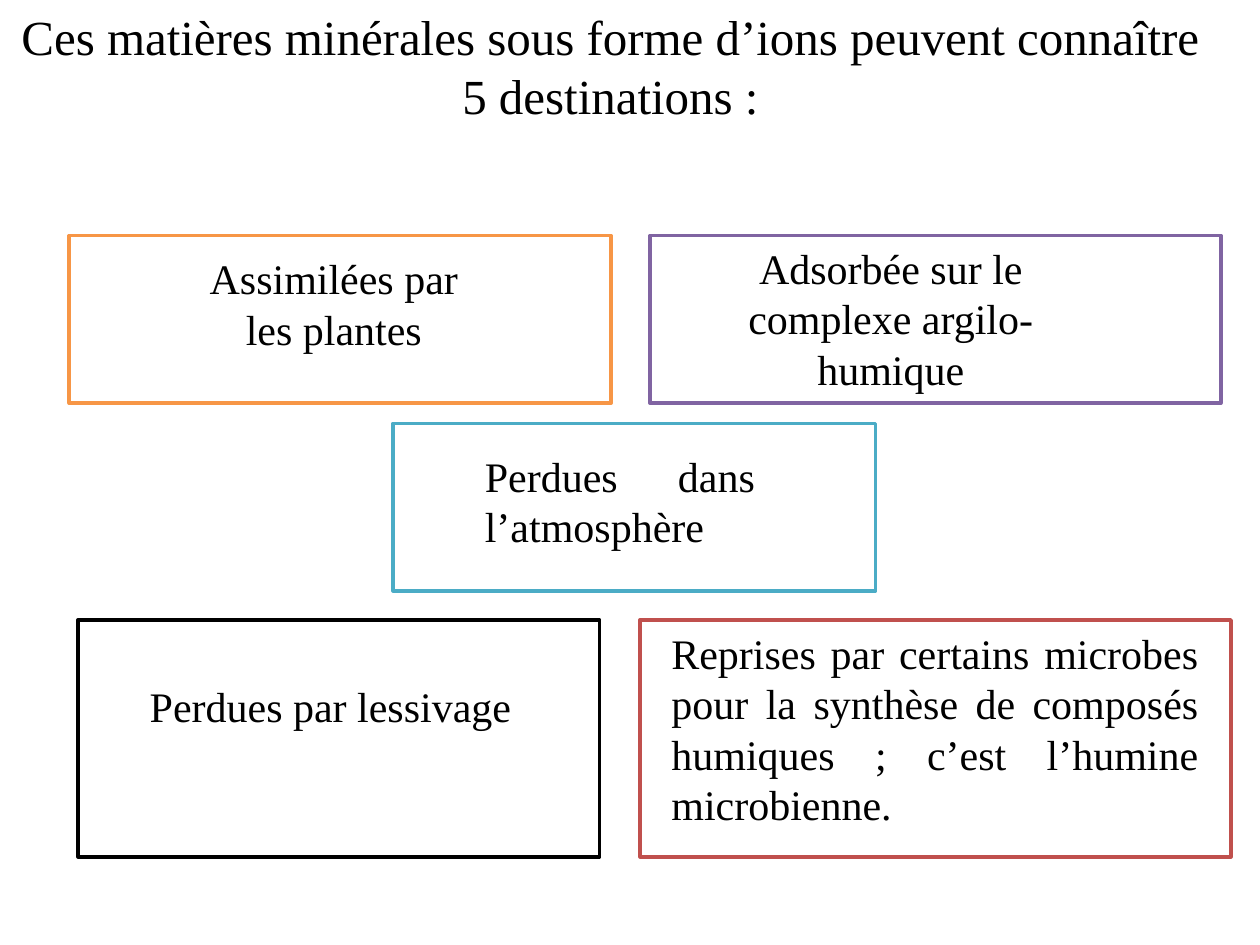
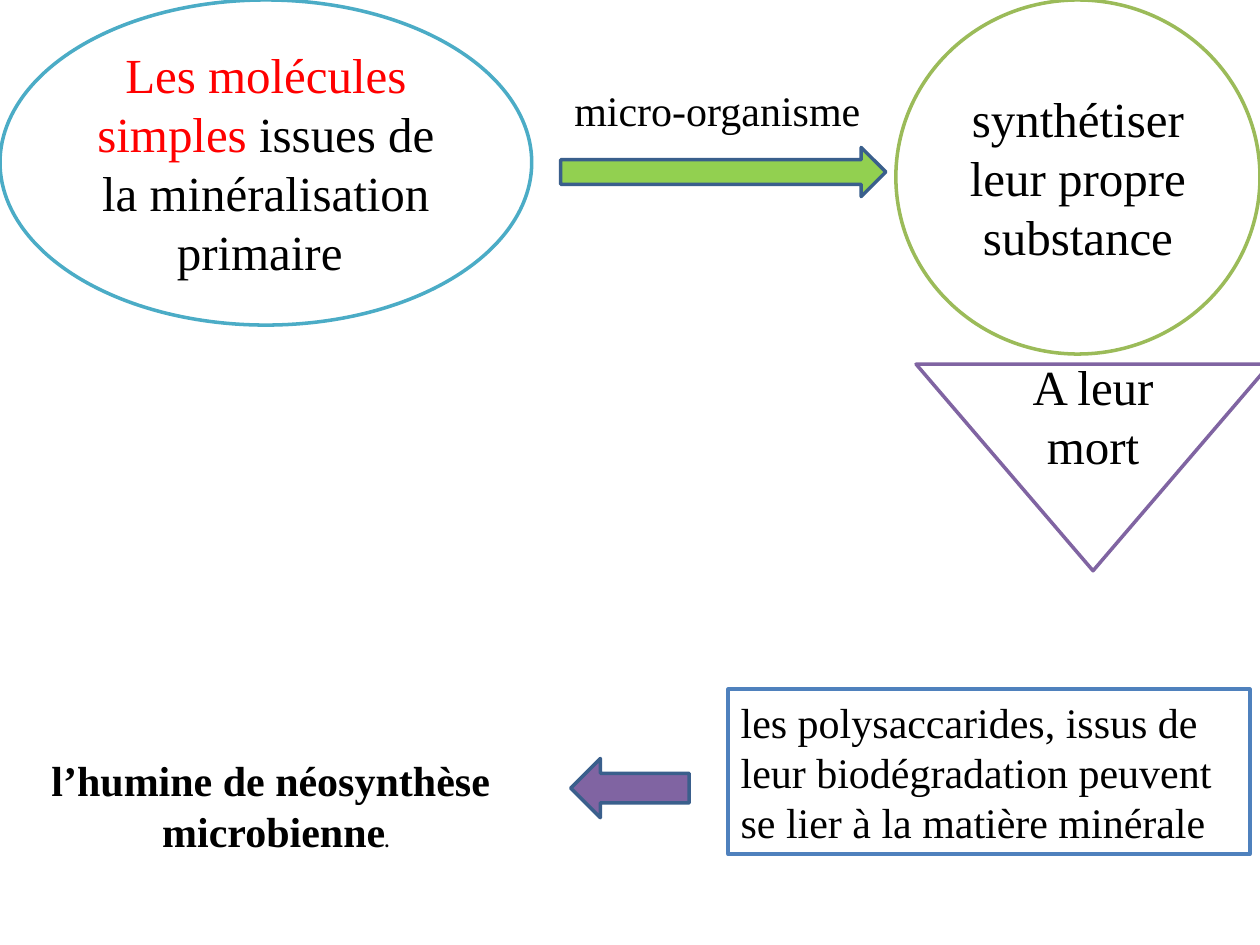
from pptx import Presentation
from pptx.dml.color import RGBColor
from pptx.enum.shapes import MSO_SHAPE
from pptx.enum.text import MSO_ANCHOR, MSO_AUTO_SIZE, PP_ALIGN
from pptx.util import Pt

PX = 9144
BLACK = RGBColor(0x00, 0x00, 0x00)
WHITE = RGBColor(0xFF, 0xFF, 0xFF)
RED = RGBColor(0xFF, 0x00, 0x00)
ORANGE = RGBColor(0xF7, 0x96, 0x46)
PURPLE = RGBColor(0x80, 0x64, 0xA2)
TEAL = RGBColor(0x4B, 0xAC, 0xC6)
BRICK = RGBColor(0xC0, 0x50, 0x4D)
BLUE = RGBColor(0x4F, 0x81, 0xBD)
OLIVE = RGBColor(0x9B, 0xBB, 0x59)
LIME = RGBColor(0x92, 0xD0, 0x50)
NAVY = RGBColor(0x3A, 0x5F, 0x8C)

RECT = MSO_SHAPE.RECTANGLE
ELLIPSE = MSO_SHAPE.OVAL
MERGE = MSO_SHAPE.FLOWCHART_MERGE
RIGHT_ARROW = MSO_SHAPE.RIGHT_ARROW
LEFT_ARROW = MSO_SHAPE.LEFT_ARROW
LEFT, CENTER, JUSTIFY = PP_ALIGN.LEFT, PP_ALIGN.CENTER, PP_ALIGN.JUSTIFY
TOP, MIDDLE = MSO_ANCHOR.TOP, MSO_ANCHOR.MIDDLE
FIT_TEXT = MSO_AUTO_SIZE.SHAPE_TO_FIT_TEXT


class Deck:
    """Holds the shared style and draws elements on the current slide."""

    font = "Times New Roman"
    body, large = 24, 28
    line_width = Pt(2)

    def __init__(self, width, height):
        self.prs = Presentation()
        self.prs.slide_width, self.prs.slide_height = width * PX, height * PX
        self.slide = None

    def new_slide(self):
        self.slide = self.prs.slides.add_slide(self.prs.slide_layouts[6])

    def shape(self, kind, box, line, fill=WHITE):
        shape = self.slide.shapes.add_shape(kind, *(n * PX for n in box))
        shape.shadow.inherit = False
        shape.fill.solid()
        shape.fill.fore_color.rgb = fill
        shape.line.color.rgb = line
        shape.line.width = self.line_width
        return shape

    def fill_text(self, frame, paragraphs, size, anchor=MIDDLE, wrap=True):
        frame.word_wrap = wrap
        frame.vertical_anchor = anchor
        for index, (align, runs) in enumerate(paragraphs):
            paragraph = frame.add_paragraph() if index else frame.paragraphs[0]
            paragraph.alignment = align
            for text, style in runs:
                run = paragraph.add_run()
                run.text = text
                run.font.name = self.font
                run.font.size = Pt(style.get("size", size))
                run.font.bold = style.get("bold", False)
                run.font.italic = style.get("italic", False)
                run.font.color.rgb = style.get("color", BLACK)

    def text(self, box, paragraphs, size=body, anchor=MIDDLE, wrap=True):
        frame = self.slide.shapes.add_textbox(*(n * PX for n in box)).text_frame
        self.fill_text(frame, paragraphs, size, anchor, wrap)
        frame.auto_size = FIT_TEXT

    def node(self, kind, box, line, paragraphs, size=large):
        self.fill_text(self.shape(kind, box, line).text_frame, paragraphs, size)


def plain(text, align=CENTER):
    return align, [(text, {})]


def destinations(deck):
    deck.new_slide()
    deck.text((0, 0, 969, 104), [plain(
        "Ces matières minérales sous forme d’ions peuvent connaître 5 destinations :")], deck.large)
    cards = [
        ((55, 187, 430, 133), ORANGE, (148, 195, 234, 91), CENTER, "Assimilées par les plantes"),
        ((516, 187, 453, 133), PURPLE, (539, 187, 336, 131), CENTER,
         "Adsorbée sur le complexe argilo-humique"),
        ((312, 336, 383, 133), TEAL, (375, 352, 234, 91), JUSTIFY, "Perdues dans l’atmosphère"),
        ((62, 492, 414, 188), BLACK, (109, 535, 344, 50), JUSTIFY, "Perdues par lessivage"),
        ((508, 492, 469, 188), BRICK, (523, 492, 438, 172), JUSTIFY,
         "Reprises par certains microbes pour la synthèse de composés humiques ; "
         "c’est l’humine microbienne."),
    ]
    for frame_box, color, text_box, align, label in cards:
        deck.shape(RECT, frame_box, color)
        deck.text(text_box, [plain(label, align)])


def neosynthesis(deck):
    deck.new_slide()
    polysaccharides = ["les polysaccarides, issus de", "leur biodégradation peuvent",
                       "se lier à la matière minérale"]
    deck.node(RECT, (578, 547, 414, 131), BLUE,
              [plain(line, LEFT) for line in polysaccharides], deck.body)
    deck.node(ELLIPSE, (0, 0, 422, 258), TEAL, [(CENTER, [
        ("Les molécules simples ", {"color": RED}),
        ("issues de la minéralisation primaire ", {})])])
    deck.shape(RIGHT_ARROW, (445, 117, 258, 39), NAVY, LIME)
    deck.text((446, 62, 249, 50), [plain("micro-organisme", LEFT)], anchor=TOP, wrap=False)
    deck.node(ELLIPSE, (711, 0, 289, 281), OLIVE, [plain("synthétiser leur propre substance")])
    deck.node(MERGE, (727, 289, 281, 164), PURPLE, [plain("A leur mort")])
    deck.text((31, 594, 372, 91), [
        (LEFT, [("l’humine de néosynthèse", {"bold": True})]),
        (CENTER, [(" microbienne", {"bold": True}),
                  (".", {"bold": True, "italic": True, "size": 10.5})]),
    ], anchor=TOP, wrap=False)
    deck.shape(LEFT_ARROW, (453, 602, 94, 47), NAVY, PURPLE)


def main():
    deck = Deck(1000, 750)
    destinations(deck)
    neosynthesis(deck)
    deck.prs.save("out.pptx")


if __name__ == "__main__":
    main()
